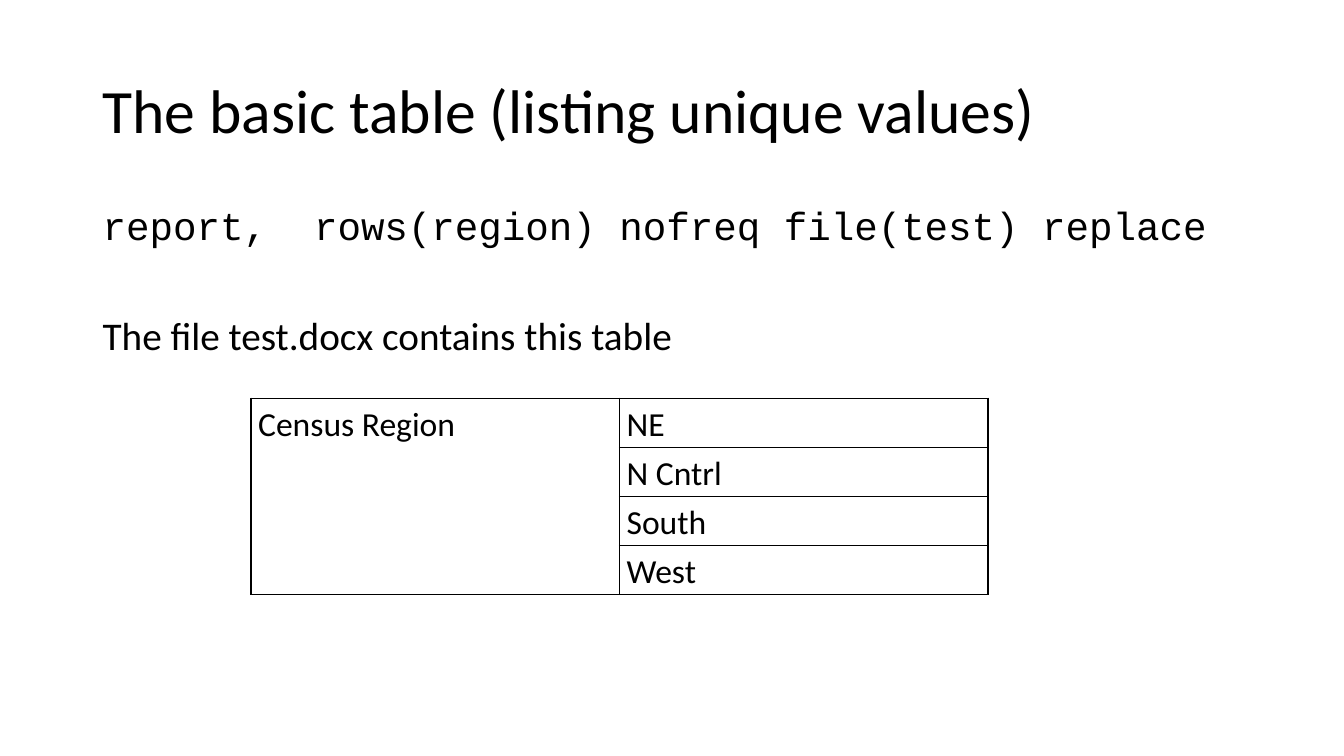
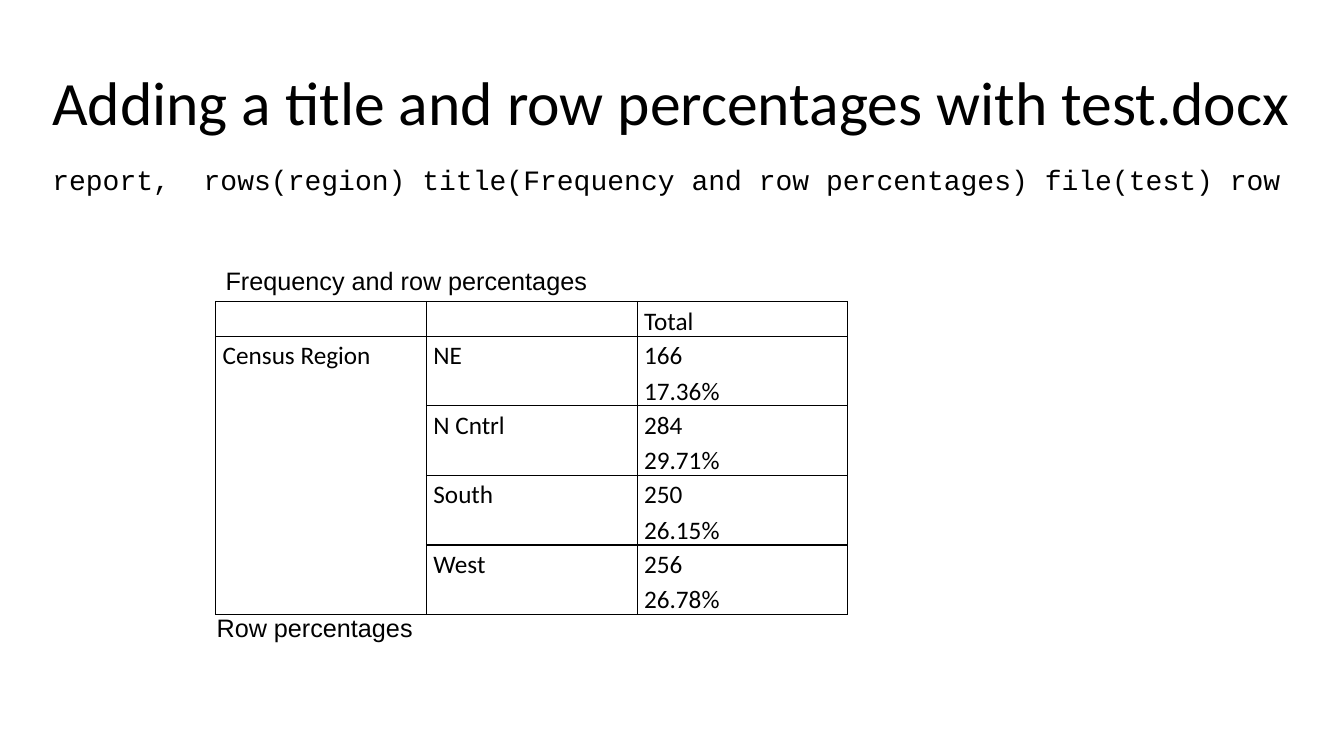
from lxml.etree import SubElement
from pptx import Presentation
from pptx.dml.color import RGBColor
from pptx.enum.text import MSO_ANCHOR
from pptx.oxml.ns import qn
from pptx.util import Inches, Pt

INK = {"text": "000000", "rule": "000000"}
FONT = {"main": "Calibri", "code": "Courier New", "note": "Arial"}
TITLE = (FONT["main"], 44)

deck = Presentation()
deck.slide_width, deck.slide_height = Inches(13.33), Inches(7.5)


def share(box):
    """Turn percentages of the slide (left, top, width, height) into lengths."""
    sides = (deck.slide_width, deck.slide_height) * 2
    return [int(side * part / 100) for side, part in zip(sides, box)]


def write(frame, lines, anchor=MSO_ANCHOR.TOP, ratio=0.9):
    """Fill a frame with paragraphs given as (words, font, size, space before)."""
    frame.word_wrap = True
    frame.vertical_anchor = anchor
    frame.text = "\n".join(line[0] for line in lines)
    for para, (_, font, size, gap) in zip(frame.paragraphs, lines):
        para.line_spacing = ratio
        para.space_before = Pt(gap)
        for run in para.runs:
            run.font.name, run.font.size = font, Pt(size)
            run.font.color.rgb = RGBColor.from_string(INK["text"])


regions = ["NE", "N Cntrl", "South", "West"]
counts = ["166\v17.36%", "284\v29.71%", "250\v26.15%", "256\v26.78%"]
label = "Census Region"

pages = [
    {
        "title": ("The basic table (listing unique values)", (6.9, 5.33, 86.25, 19.33)),
        "body": (
            [
                ("report,  rows(region) nofreq file(test) replace", FONT["code"], 28, 10),
                ("The file test.docx contains this table", FONT["main"], 28, 48),
            ],
            (6.9, 26.67, 86.25, 63.47),
        ),
        "notes": [],
        "rows": [[label if i == 0 else "", name] for i, name in enumerate(regions)],
        "head": 0, "size": 24, "place": (18.68, 52.67, 54.84), "step": 6.5,
    },
    {
        "title": ("Adding a title and row percentages with test.docx", (3.15, 4.27, 95.8, 19.33)),
        "body": (
            [("report,  rows(region) title(Frequency and row percentages) file(test) row",
              FONT["code"], 20, 10)],
            (3.15, 21.33, 93.7, 70.53),
        ),
        "notes": [
            ("Frequency and row percentages", (16.05, 34.4, 30, 5.33), MSO_ANCHOR.MIDDLE),
            ("Row percentages", (15.38, 80.4, 18, 5.33), MSO_ANCHOR.TOP),
        ],
        "rows": [["", "", "Total"]] + [
            [label if i == 0 else "", name, count]
            for i, (name, count) in enumerate(zip(regions, counts))
        ],
        "head": 1, "size": 18, "place": (16.05, 39.87, 47.04), "step": 4.6,
    },
]

for page in pages:
    slide = deck.slides.add_slide(deck.slide_layouts[6])

    words, box = page["title"]
    write(slide.shapes.add_textbox(*share(box)).text_frame, [(words, *TITLE, 0)], MSO_ANCHOR.MIDDLE)
    lines, box = page["body"]
    write(slide.shapes.add_textbox(*share(box)).text_frame, lines)
    for words, box, anchor in page["notes"]:
        write(slide.shapes.add_textbox(*share(box)).text_frame,
              [(words, FONT["note"], 18, 0)], anchor, 1.0)

    # Each row is as tall as its longest cell has lines.
    rows = page["rows"]
    tall = [max(text.count("\v") + 1 for text in row) for row in rows]
    box = share((*page["place"], page["step"] * sum(tall)))
    table = slide.shapes.add_table(len(rows), len(rows[0]), *box).table
    table.first_row = table.horz_banding = False
    for row, size in zip(table.rows, tall):
        row.height = int(deck.slide_height * page["step"] * size / 100)

    for r, row in enumerate(rows):
        for c, text in enumerate(row):
            cell = table.cell(r, c)
            cell.margin_left = cell.margin_right = Inches(0.07)
            cell.margin_top = cell.margin_bottom = 0
            write(cell.text_frame, [(text, FONT["main"], page["size"], 0)], ratio=1.15)
            props = cell._tc.get_or_add_tcPr()
            for side in ("a:lnL", "a:lnR", "a:lnT", "a:lnB"):
                line = SubElement(props, qn(side), w=str(Pt(1)))
                fill = SubElement(line, qn("a:solidFill"))
                SubElement(fill, qn("a:srgbClr"), val=INK["rule"])
            cell.fill.background()
    table.cell(page["head"], 0).merge(table.cell(len(rows) - 1, 0))

deck.save("out.pptx")
